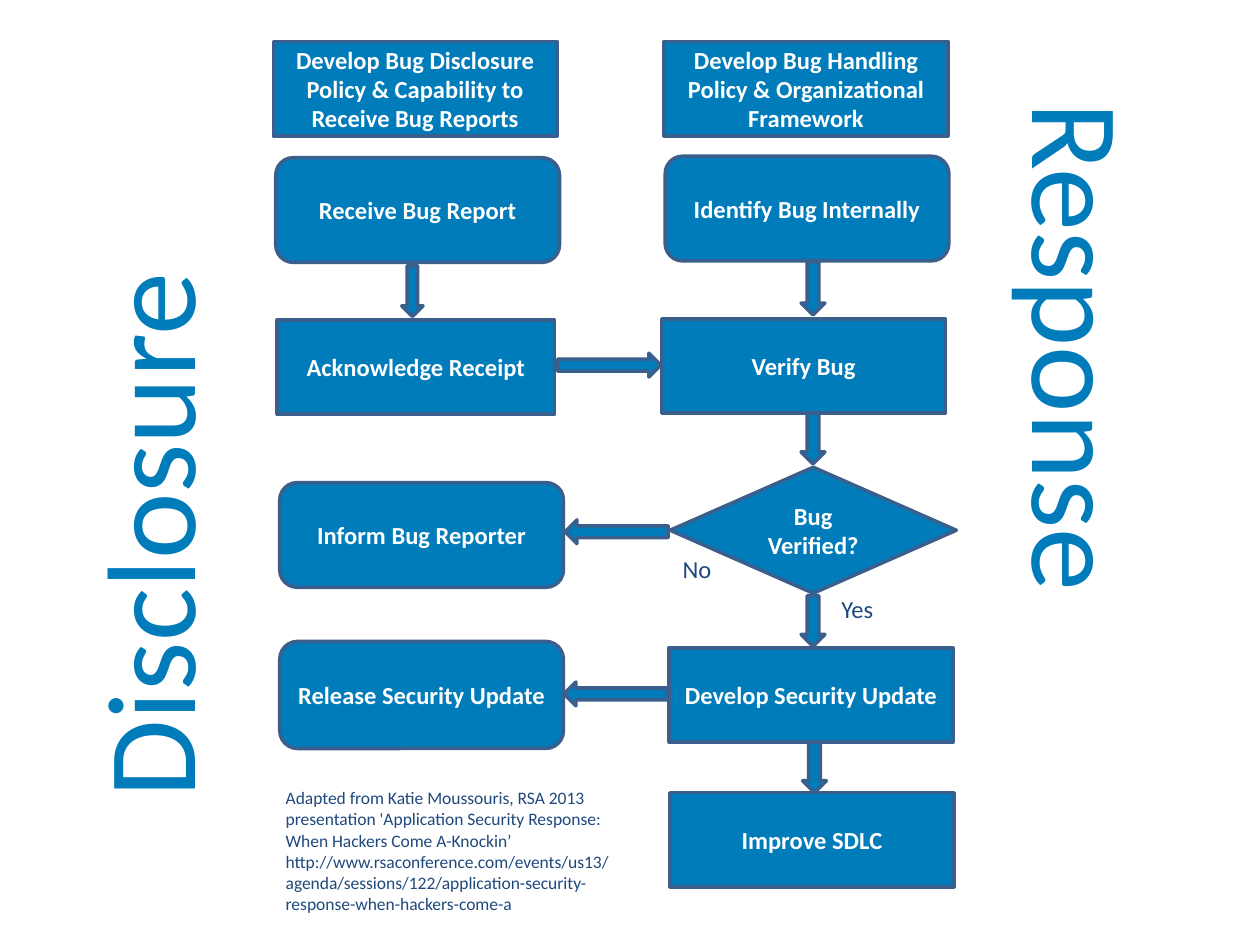
from pptx import Presentation
from pptx.dml.color import RGBColor
from pptx.enum.shapes import MSO_SHAPE as Kind
from pptx.enum.text import MSO_ANCHOR as Anchor, MSO_AUTO_SIZE as Fit, PP_ALIGN as Align
from pptx.util import Cm, Pt

BLUE, EDGE, NAVY, WHITE = "007CBA", "3A5F8C", "1F497D", "FFFFFF"
NODE = {"name": "Calibri", "size": Pt(14), "bold": True}
LABEL = {"name": "Calibri", "size": Pt(14)}
SIDE = {"name": "Calibri", "size": Pt(72)}
NOTE = {"name": "Calibri", "size": Pt(10)}

WIDE, LOW, TALL = 5.72, 1.9, 2.11
STEP, ROUND = Kind.FLOWCHART_PROCESS, Kind.ROUNDED_RECTANGLE

# kind, left, top, width, height, text
NODES = [
    (STEP, 5.51, 0.84, WIDE, LOW,
     "Develop Bug Disclosure Policy & Capability to Receive Bug Reports"),
    (ROUND, 5.56, 3.18, WIDE, TALL, "Receive Bug Report"),
    (Kind.RECTANGLE, 5.59, 6.45, 5.59, LOW, "Acknowledge Receipt"),
    (ROUND, 5.64, 9.73, WIDE, TALL, "Inform Bug Reporter"),
    (ROUND, 5.64, 12.93, WIDE, 2.16, "Release Security Update"),
    (STEP, 13.39, 0.84, WIDE, LOW,
     "Develop Bug Handling Policy & Organizational Framework"),
    (ROUND, 13.41, 3.15, WIDE, TALL, "Identify Bug Internally"),
    (STEP, 13.34, 6.43, WIDE, LOW, "Verify Bug"),
    (Kind.FLOWCHART_DECISION, 13.51, 9.42, 5.77, 2.54, "Bug Verified?"),
    (STEP, 13.49, 13.06, WIDE, LOW, "Develop Security Update"),
    (STEP, 13.51, 15.98, WIDE, LOW, "Improve SDLC"),
]

# left, top, width, length before turning, turn in degrees
ARROWS = [
    (8.1, 5.36, 0.43, 1.02, 0),
    (16.15, 5.28, 0.48, 1.07, 0),
    (16.15, 8.33, 0.48, 1.02, 0),
    (16.15, 12.01, 0.48, 1.02, 0),
    (16.18, 14.96, 0.48, 1.02, 0),
    (12.04, 6.32, 0.48, 2.08, 270),
    (12.19, 9.68, 0.48, 2.08, 90),
    (12.17, 12.95, 0.48, 2.08, 90),
]

CREDIT = [
    "Adapted from Katie Moussouris, RSA 2013 presentation 'Application "
    "Security Response: When Hackers Come A-Knockin’",
    "http://www.rsaconference.com/events/us13/agenda/sessions/122/"
    "application-security-response-when-hackers-come-a",
]


def color(code):
    return RGBColor.from_string(code)


def style(font, look, code):
    for key, value in look.items():
        setattr(font, key, value)
    font.color.rgb = color(code)


def write(frame, lines, look, code, align=Align.LEFT):
    frame.text = "\n".join(lines)
    for para in frame.paragraphs:
        para.alignment = align
        for run in para.runs:
            style(run.font, look, code)


def add_block(slide, kind, *box):
    shape = slide.shapes.add_shape(kind, *map(Cm, box))
    shape.shadow.inherit = False
    shape.fill.solid()
    shape.fill.fore_color.rgb = color(BLUE)
    shape.line.color.rgb = color(EDGE)
    shape.line.width = Pt(2)
    return shape


def add_node(slide, kind, left, top, width, height, text):
    frame = add_block(slide, kind, left, top, width, height).text_frame
    frame.word_wrap = True
    frame.vertical_anchor = Anchor.MIDDLE
    write(frame, [text], NODE, WHITE, Align.CENTER)


def add_arrow(slide, left, top, width, length, turn):
    arrow = add_block(slide, Kind.DOWN_ARROW, left, top, width, length)
    arrow.rotation = turn


def add_text(slide, box, lines, look, code, wrap=False):
    frame = slide.shapes.add_textbox(*map(Cm, box)).text_frame
    frame.word_wrap = wrap
    frame.auto_size = Fit.SHAPE_TO_FIT_TEXT
    write(frame, lines, look, code)
    return frame


def add_side(slide, box, word, flow, edge):
    """Add a large turned word, set in from the edge where it starts."""
    frame = add_text(slide, box, [word], SIDE, BLUE)
    frame._txBody.bodyPr.set("vert", flow)
    setattr(frame, edge, Cm(0.83))


def main():
    deck = Presentation()
    deck.slide_width, deck.slide_height = Cm(25.4), Cm(19.05)
    slide = deck.slides.add_slide(deck.slide_layouts[6])
    for node in NODES:
        add_node(slide, *node)
    for arrow in ARROWS:
        add_arrow(slide, *arrow)
    add_text(slide, (13.51, 11.05, 1.09, 0.86), ["No"], LABEL, NAVY)
    add_text(slide, (16.71, 11.86, 1.17, 0.86), ["Yes"], LABEL, NAVY)
    add_side(slide, (1.27, 5.38, 3.58, 11.53), "Disclosure", "vert270", "margin_bottom")
    add_side(slide, (19.89, 1.24, 3.58, 10.8), "Response", "vert", "margin_top")
    add_text(slide, (5.51, 15.75, 7.19, 3.25), CREDIT, NOTE, NAVY, wrap=True)
    deck.save("out.pptx")


if __name__ == "__main__":
    main()
